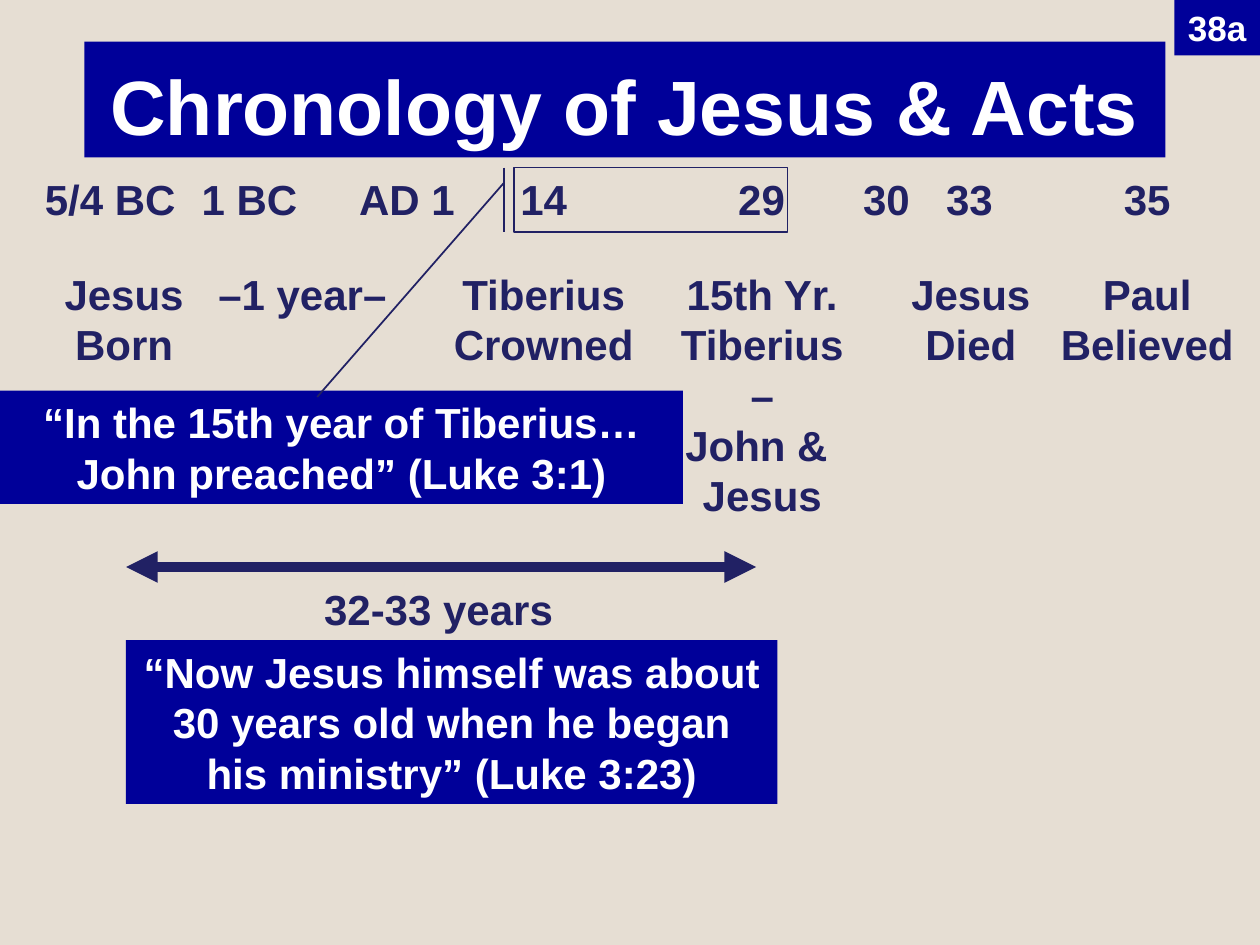
from lxml.etree import SubElement
from pptx import Presentation
from pptx.dml.color import RGBColor
from pptx.enum.shapes import MSO_CONNECTOR, MSO_SHAPE
from pptx.enum.text import MSO_ANCHOR, MSO_AUTO_SIZE, PP_ALIGN
from pptx.oxml.ns import qn
from pptx.util import Inches, Pt

COLORS = {"background": "E6DED3", "banner": "000099", "ink": "212164", "light": "FFFFFF"}

DATE_TOP, EVENT_TOP = 1.33, 2.08
# text, left, width
DATES = [
    ("5/4 BC", 0.25, 1.25), ("1 BC", 1.5, 0.96), ("AD 1", 2.75, 0.96),
    ("14", 4.03, 0.57), ("29", 5.76, 0.57), ("30", 6.75, 0.57),
    ("33", 7.41, 0.57), ("35", 8.82, 0.57),
]
# paragraphs, left, width, height
EVENTS = [
    (["Jesus\nBorn"], 0.41, 1.15, 0.9),
    (["–1 year–"], 1.63, 1.54, 0.5),
    (["Tiberius\nCrowned"], 3.5, 1.63, 0.9),
    (["15th Yr.\nTiberius", "–\nJohn & \nJesus"], 5.3, 1.5, 2.1),
    (["Jesus\nDied"], 7.13, 1.15, 0.9),
    (["Paul\nBelieved"], 8.32, 1.57, 0.9),
]
# text, left, top, width, height, size
BANNERS = [
    ("“Now Jesus himself was about 30 years old when he began his ministry” (Luke 3:23)",
     1, 5.08, 5.17, 1.3, 24),
    ("“In the 15th year of Tiberius… John preached” (Luke 3:1)", 0, 3.1, 5.42, 0.9, 24),
    ("38a", 9.32, 0, 0.68, 0.44, 20),
]


def rgb(name):
    return RGBColor.from_string(COLORS[name])


def write(frame, paragraphs, size=24, color="ink", wrap=True,
          anchor=MSO_ANCHOR.TOP, fit=MSO_AUTO_SIZE.SHAPE_TO_FIT_TEXT):
    """Fill a text frame with centred bold paragraphs; newlines are line breaks."""
    frame.word_wrap = wrap
    frame.auto_size = fit
    frame.vertical_anchor = anchor
    for index, text in enumerate(paragraphs):
        paragraph = frame.add_paragraph() if index else frame.paragraphs[0]
        paragraph.text = text
        paragraph.alignment = PP_ALIGN.CENTER
        for run in paragraph.runs:
            run.font.name = "Arial"
            run.font.size = Pt(size)
            run.font.bold = True
            run.font.color.rgb = rgb(color)


def paint_banner(shape):
    shape.fill.solid()
    shape.fill.fore_color.rgb = rgb("banner")
    shape.line.fill.background()


def add_title(slide, text):
    title = slide.shapes.title
    title.left, title.top = Inches(0.67), Inches(0.33)
    title.width, title.height = Inches(8.58), Inches(0.92)
    paint_banner(title)
    write(title.text_frame, [text], size=44, color="light",
          anchor=MSO_ANCHOR.BOTTOM, fit=MSO_AUTO_SIZE.NONE)


def add_label(slide, paragraphs, left, top, width, height=0.5):
    label = slide.shapes.add_textbox(Inches(left), Inches(top), Inches(width), Inches(height))
    write(label.text_frame, paragraphs, wrap=False)


def add_banner(slide, text, left, top, width, height, size):
    banner = slide.shapes.add_shape(
        MSO_SHAPE.RECTANGLE, Inches(left), Inches(top), Inches(width), Inches(height))
    banner.shadow.inherit = False
    paint_banner(banner)
    write(banner.text_frame, [text], size=size, color="light")


def add_span_arrow(slide, start, end, y):
    """Draw a thick horizontal line with an arrowhead at both ends."""
    span = slide.shapes.add_connector(
        MSO_CONNECTOR.STRAIGHT, Inches(start), Inches(y), Inches(end), Inches(y))
    span.line.color.rgb = rgb("ink")
    span.line.width = Pt(6)
    outline = span.line._get_or_add_ln()
    for arrowhead in ("a:headEnd", "a:tailEnd"):
        SubElement(outline, qn(arrowhead), type="triangle")
    SubElement(span._element.spPr, qn("a:effectLst"))


def add_reign_callout(slide):
    """Frame the years 14 to 29 and point to the verse that dates them."""
    callout = slide.shapes.add_shape(
        MSO_SHAPE.LINE_CALLOUT_1_BORDER_AND_ACCENT_BAR,
        Inches(4.08), Inches(DATE_TOP), Inches(2.17), Inches(0.51))
    callout.shadow.inherit = False
    for index, value in enumerate((0.243, -0.038, 3.571, -0.72)):
        callout.adjustments[index] = value
    callout.fill.background()
    callout.line.color.rgb = rgb("ink")
    callout.line.width = Pt(1)


def main():
    deck = Presentation()
    deck.slide_width, deck.slide_height = Inches(10), Inches(7.5)
    slide = deck.slides.add_slide(deck.slide_layouts[5])
    slide.background.fill.solid()
    slide.background.fill.fore_color.rgb = rgb("background")

    add_title(slide, "Chronology of Jesus & Acts")
    for date, left, width in DATES:
        add_label(slide, [date], left, DATE_TOP, width)
    for event, left, width, height in EVENTS:
        add_label(slide, event, left, EVENT_TOP, width, height)
    add_label(slide, ["32-33 years"], 2.47, 4.58, 2.02)
    add_span_arrow(slide, 1, 6, 4.5)
    for banner in BANNERS:
        add_banner(slide, *banner)
    add_reign_callout(slide)
    deck.save("out.pptx")


if __name__ == "__main__":
    main()
